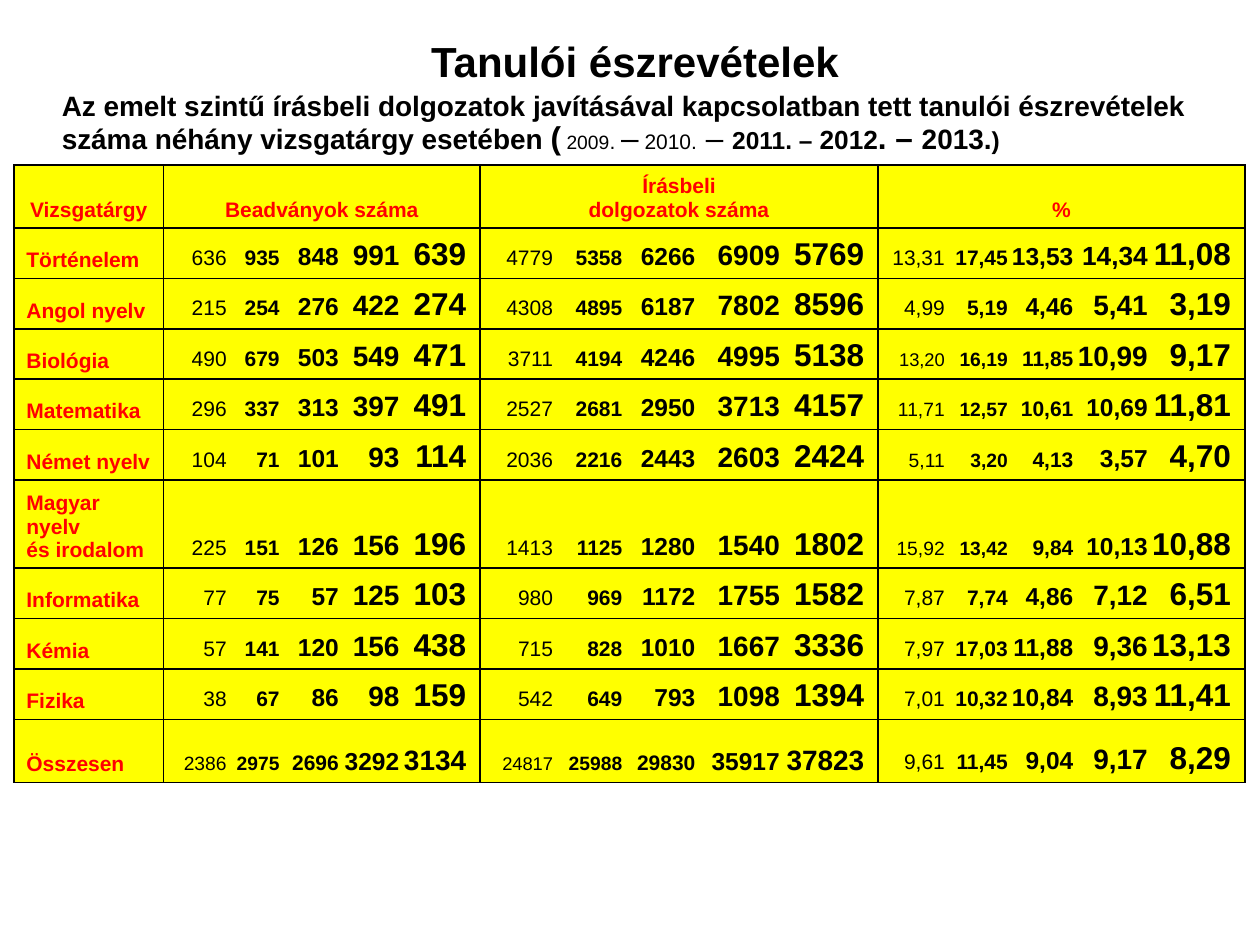
from dataclasses import dataclass

from lxml.etree import SubElement
from pptx import Presentation
from pptx.dml.color import RGBColor
from pptx.enum.text import MSO_ANCHOR, MSO_AUTO_SIZE, PP_ALIGN
from pptx.oxml.ns import qn
from pptx.util import Inches, Pt


@dataclass(frozen=True)
class Theme:
    """Colours, font and type sizes of the slide."""
    font: str = "Arial"
    ink: str = "000000"
    label: str = "FF0000"
    cell: str = "FFFF00"
    title: float = 24
    lead: float = 16
    text: float = 12
    growing: tuple = (12, 12, 14, 16, 18)
    compact: tuple = (11, 11, 12, 14, 18)
    totals: tuple = (11, 11, 12, 14, 16)
    border: float = 1


THEME = Theme()

LEAD_SPANS = [
    ("Az emelt szintű írásbeli dolgozatok javításával kapcsolatban tett "
     "tanulói észrevételek száma néhány vizsgatárgy esetében ", THEME.lead, True),
    ("(", 18, True), (" 2009", 11, False), (". ", 12, False), ("–", 18, False),
    (" 2010.", 12, False), (" – ", 18, False), ("2011. – ", 14, True),
    ("2012", 15, True), (". – ", 18, True), ("2013.", 16, True), (")", 14, True),
]

HEADERS = ["Vizsgatárgy", "Beadványok száma", "Írásbeli\ndolgozatok száma", "%"]

SUBJECTS = [
    ("Történelem", "636 935 848 991 639", "4779 5358 6266 6909 5769",
     "13,31 17,45 13,53 14,34 11,08"),
    ("Angol nyelv", "215 254 276 422 274", "4308 4895 6187 7802 8596",
     "4,99 5,19 4,46 5,41 3,19"),
    ("Biológia", "490 679 503 549 471", "3711 4194 4246 4995 5138",
     "13,20 16,19 11,85 10,99 9,17"),
    ("Matematika", "296 337 313 397 491", "2527 2681 2950 3713 4157",
     "11,71 12,57 10,61 10,69 11,81"),
    ("Német nyelv", "104 71 101 93 114", "2036 2216 2443 2603 2424",
     "5,11 3,20 4,13 3,57 4,70"),
    ("Magyar nyelv\nés irodalom", "225 151 126 156 196", "1413 1125 1280 1540 1802",
     "15,92 13,42 9,84 10,13 10,88"),
    ("Informatika", "77 75 57 125 103", "980 969 1172 1755 1582",
     "7,87 7,74 4,86 7,12 6,51"),
    ("Kémia", "57 141 120 156 438", "715 828 1010 1667 3336",
     "7,97 17,03 11,88 9,36 13,13"),
    ("Fizika", "38 67 86 98 159", "542 649 793 1098 1394",
     "7,01 10,32 10,84 8,93 11,41"),
    ("Összesen", "2386 2975 2696 3292 3134", "24817 25988 29830 35917 37823",
     "9,61 11,45 9,04 9,17 8,29"),
]

SPECIAL_SIZES = {
    ("Történelem", 3): (12, 12, 14, 15, 18),
    ("Biológia", 3): (10.5, 11, 12, 16, 18),
    ("Matematika", 3): THEME.compact,
    ("Német nyelv", 3): THEME.compact,
    ("Magyar nyelv\nés irodalom", 3): THEME.compact,
    ("Összesen", 1): THEME.totals,
    ("Összesen", 2): (10.5, 11, 12, 14, 16),
}

COLUMN_WIDTHS = [1.19, 2.51, 3.16, 2.91]
ROW_HEIGHTS = [0.5] + [0.4] * 5 + [0.7] + [0.4] * 3 + [0.5]
TAB_STOPS = {
    1: (0.4, 0.82, 1.29, 1.77, 2.3),
    2: (0.48, 1.03, 1.61, 2.28, 2.95),
    3: (0.43, 0.93, 1.45, 2.04, 2.7),
}


def add_span(para, text, size=THEME.text, bold=True, color=THEME.ink):
    """Append formatted text to a paragraph."""
    span = para.add_run()
    span.text = text
    span.font.name = THEME.font
    span.font.size = Pt(size)
    span.font.bold = bold
    span.font.color.rgb = RGBColor.from_string(color)


def place(box, left, top, width, height, anchor):
    """Move a placeholder and return its text frame."""
    box.left, box.top = Inches(left), Inches(top)
    box.width, box.height = Inches(width), Inches(height)
    frame = box.text_frame
    frame.word_wrap = True
    frame.auto_size = MSO_AUTO_SIZE.NONE
    frame.vertical_anchor = anchor
    return frame


def add_title(page):
    """Fill the title placeholder."""
    frame = place(page.shapes.title, 1.93, 0.21, 6.22, 0.55, MSO_ANCHOR.MIDDLE)
    para = frame.paragraphs[0]
    para.alignment = PP_ALIGN.CENTER
    add_span(para, "Tanulói észrevételek", size=THEME.title)


def add_lead(page):
    """Fill the body placeholder with the introductory sentence."""
    frame = place(page.placeholders[1], 0.39, 0.68, 9.61, 0.62, MSO_ANCHOR.TOP)
    para = frame.paragraphs[0]
    properties = para._p.get_or_add_pPr()
    properties.set("marL", "0")
    properties.set("indent", "0")
    SubElement(properties, qn("a:buNone"))
    para.line_spacing = 0.9
    para.space_before = Pt(0)
    for text, size, bold in LEAD_SPANS:
        add_span(para, text, size=size, bold=bold)


def style_cell(cell):
    """Give a cell its fill, bottom anchor and four borders."""
    cell.vertical_anchor = MSO_ANCHOR.BOTTOM
    properties = cell._tc.get_or_add_tcPr()
    for side in ("lnL", "lnR", "lnT", "lnB"):
        line = SubElement(properties, qn(f"a:{side}"), w=str(Pt(THEME.border)))
        fill = SubElement(line, qn("a:solidFill"))
        SubElement(fill, qn("a:srgbClr"), val=THEME.ink)
    cell.fill.solid()
    cell.fill.fore_color.rgb = RGBColor.from_string(THEME.cell)


def fill_label(cell, text, alignment):
    """Write a red label, one paragraph for each line."""
    frame = cell.text_frame
    for index, line in enumerate(text.split("\n")):
        para = frame.add_paragraph() if index else frame.paragraphs[0]
        para.alignment = alignment
        add_span(para, line, color=THEME.label)


def fill_values(cell, values, stops, sizes):
    """Write one value for each year, aligned at right tab stops."""
    para = cell.text_frame.paragraphs[0]
    tabs = SubElement(para._p.get_or_add_pPr(), qn("a:tabLst"))
    for stop in stops:
        SubElement(tabs, qn("a:tab"), pos=str(Inches(stop)), algn="r")
    for index, (value, size) in enumerate(zip(values.split(), sizes)):
        add_span(para, f"\t{value}", size=size, bold=index > 0)


def add_subject_table(page):
    """Build the table of subjects and yearly values."""
    table = page.shapes.add_table(
        len(ROW_HEIGHTS), len(COLUMN_WIDTHS), Inches(0.11), Inches(1.31),
        Inches(sum(COLUMN_WIDTHS)), Inches(sum(ROW_HEIGHTS))).table
    table.first_row = table.horz_banding = False
    for column, width in zip(table.columns, COLUMN_WIDTHS):
        column.width = Inches(width)
    for row, height in zip(table.rows, ROW_HEIGHTS):
        row.height = Inches(height)
    for cell in table.iter_cells():
        style_cell(cell)
    for column, header in enumerate(HEADERS):
        fill_label(table.cell(0, column), header, PP_ALIGN.CENTER)
    for row, (name, *series) in enumerate(SUBJECTS, start=1):
        fill_label(table.cell(row, 0), name, PP_ALIGN.LEFT)
        for column, values in enumerate(series, start=1):
            sizes = SPECIAL_SIZES.get((name, column), THEME.growing)
            fill_values(table.cell(row, column), values, TAB_STOPS[column], sizes)


def main():
    """Build and save the deck."""
    deck = Presentation()
    deck.slide_width, deck.slide_height = Inches(10), Inches(7.5)
    page = deck.slides.add_slide(deck.slide_layouts[1])
    add_title(page)
    add_lead(page)
    add_subject_table(page)
    deck.save("out.pptx")


if __name__ == "__main__":
    main()
